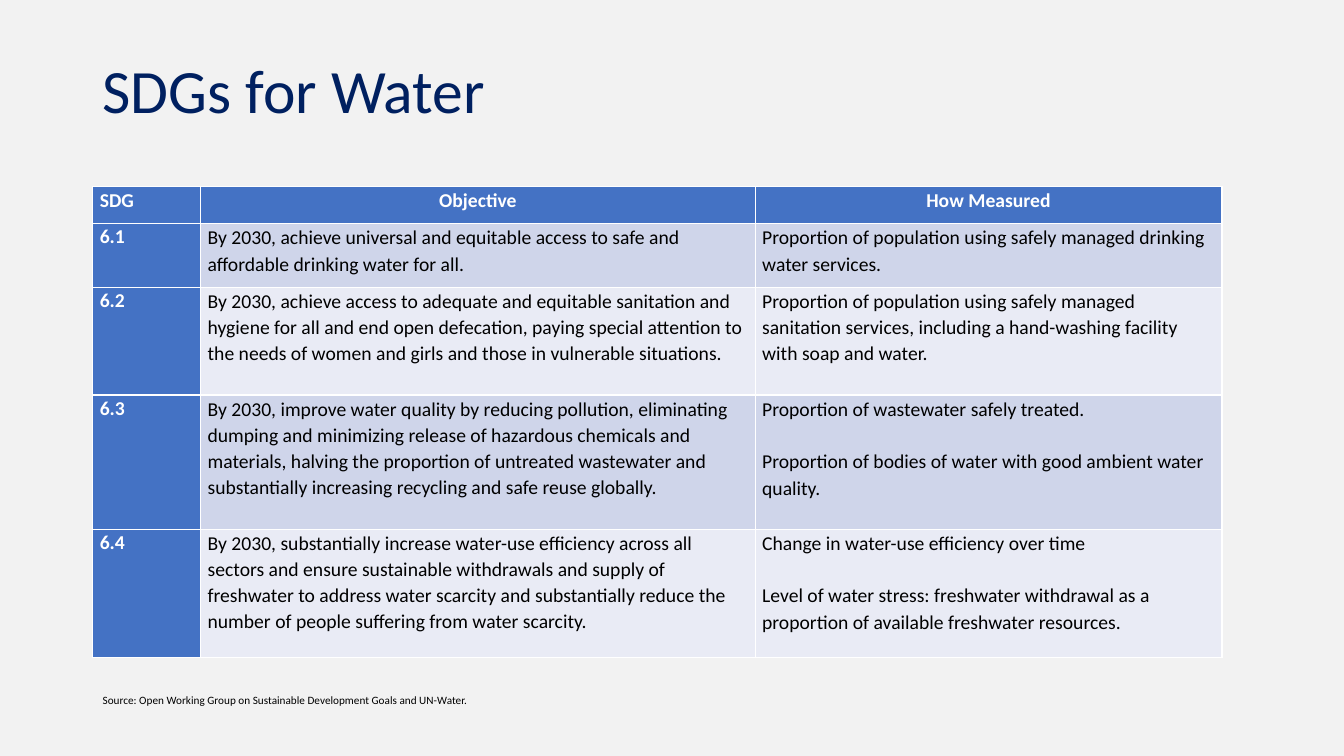
import pptx
import pptx.dml.color
import pptx.enum.text
import pptx.util

Inches = pptx.util.Inches
Pt = pptx.util.Pt
RGBColor = pptx.dml.color.RGBColor
PP_ALIGN = pptx.enum.text.PP_ALIGN
MSO_ANCHOR = pptx.enum.text.MSO_ANCHOR

BACKGROUND = RGBColor(0xF2, 0xF2, 0xF2)
NAVY = RGBColor(0x00, 0x20, 0x60)
BLUE = RGBColor(0x44, 0x72, 0xC4)
BAND_DARK = RGBColor(0xCF, 0xD5, 0xEA)
BAND_LIGHT = RGBColor(0xE9, 0xEB, 0xF5)
WHITE = RGBColor(0xFF, 0xFF, 0xFF)
BLACK = RGBColor(0x00, 0x00, 0x00)

LEFT = 0.92
COLUMN_WIDTHS = (1.07, 5.5, 4.63)
ROW_HEIGHTS = (0.37, 0.63, 1.07, 1.33, 1.27)

HEADERS = ("SDG", "Objective", "How Measured")
GOALS = (
    ("6.1",
     "By 2030, achieve universal and equitable access to safe and affordable "
     "drinking water for all.",
     ("Proportion of population using safely managed drinking water services.",)),
    ("6.2",
     "By 2030, achieve access to adequate and equitable sanitation and hygiene "
     "for all and end open defecation, paying special attention to the needs of "
     "women and girls and those in vulnerable situations.",
     ("Proportion of population using safely managed sanitation services, "
      "including a hand-washing facility with soap and water.",)),
    ("6.3",
     "By 2030, improve water quality by reducing pollution, eliminating dumping "
     "and minimizing release of hazardous chemicals and materials, halving the "
     "proportion of untreated wastewater and substantially increasing recycling "
     "and safe reuse globally.",
     ("Proportion of wastewater safely treated.",
      "Proportion of bodies of water with good ambient water quality.")),
    ("6.4",
     "By 2030, substantially increase water-use efficiency across all sectors "
     "and ensure sustainable withdrawals and supply of freshwater to address "
     "water scarcity and substantially reduce the number of people suffering "
     "from water scarcity.",
     ("Change in water-use efficiency over time",
      "Level of water stress: freshwater withdrawal as a proportion of "
      "available freshwater resources.")),
)

CELL_MARGINS = {
    "margin_left": Inches(0.07),
    "margin_right": Inches(0.07),
    "margin_top": 0,
    "margin_bottom": 0,
}
HEADING_FONT = {"name": "Calibri", "size": Pt(14), "bold": True}
BODY_FONT = {"name": "Calibri", "size": Pt(14), "bold": False}
TITLE_FONT = {"name": "Calibri", "size": Pt(44)}
SOURCE_FONT = {"name": "Calibri", "size": Pt(8)}


def set_attributes(target, values):
    for name, value in values.items():
        setattr(target, name, value)


def write_paragraph(paragraph, text, font, color, layout):
    run = paragraph.add_run()
    run.text = text
    set_attributes(run.font, font)
    run.font.color.rgb = color
    set_attributes(paragraph, layout)


def add_text(slide, box, text, font, color, layout, anchor):
    shape = slide.shapes.add_textbox(*(Inches(length) for length in box))
    frame = shape.text_frame
    set_attributes(frame, {"word_wrap": True, "vertical_anchor": anchor})
    write_paragraph(frame.paragraphs[0], text, font, color, layout)


def fill_cell(cell, texts, fill, font, color, layout):
    set_attributes(cell, CELL_MARGINS)
    cell.fill.solid()
    cell.fill.fore_color.rgb = fill
    frame = cell.text_frame
    for index, text in enumerate(texts):
        paragraph = frame.add_paragraph() if index else frame.paragraphs[0]
        write_paragraph(paragraph, text, font, color, layout)
        if index:
            paragraph.space_before = Pt(19)


def add_goals_table(slide):
    frame = slide.shapes.add_table(
        len(ROW_HEIGHTS), len(COLUMN_WIDTHS), Inches(LEFT), Inches(1.85),
        Inches(sum(COLUMN_WIDTHS)), Inches(sum(ROW_HEIGHTS)))
    table = frame.table
    for column, width in zip(table.columns, COLUMN_WIDTHS):
        column.width = Inches(width)
    for row, height in zip(table.rows, ROW_HEIGHTS):
        row.height = Inches(height)

    for index, header in enumerate(HEADERS):
        alignment = PP_ALIGN.CENTER if index else PP_ALIGN.LEFT
        fill_cell(table.cell(0, index), (header,), BLUE, HEADING_FONT, WHITE,
                  {"line_spacing": 1.1, "alignment": alignment})

    for index, (number, objective, measures) in enumerate(GOALS, start=1):
        band = BAND_DARK if index % 2 else BAND_LIGHT
        fill_cell(table.cell(index, 0), (number,), BLUE, HEADING_FONT, WHITE,
                  {"line_spacing": Pt(18), "space_after": Pt(3.8)})
        for column, texts in enumerate(((objective,), measures), start=1):
            fill_cell(table.cell(index, column), texts, band, BODY_FONT, BLACK,
                      {"line_spacing": 1.1})


def main():
    presentation = pptx.Presentation()
    set_attributes(presentation, {"slide_width": Inches(13.33),
                                  "slide_height": Inches(7.5)})
    slide = presentation.slides.add_slide(presentation.slide_layouts[6])
    slide.background.fill.solid()
    slide.background.fill.fore_color.rgb = BACKGROUND

    add_text(slide, (LEFT, 0.4, 11.5, 1.06), "SDGs for Water",
             TITLE_FONT, NAVY, {"line_spacing": 0.9}, MSO_ANCHOR.MIDDLE)
    add_goals_table(slide)
    add_text(slide, (LEFT, 6.83, 6.37, 0.27),
             "Source: Open Working Group on Sustainable Development Goals and UN-Water.",
             SOURCE_FONT, BLACK, {}, MSO_ANCHOR.TOP)
    presentation.save("out.pptx")


if __name__ == "__main__":
    main()
